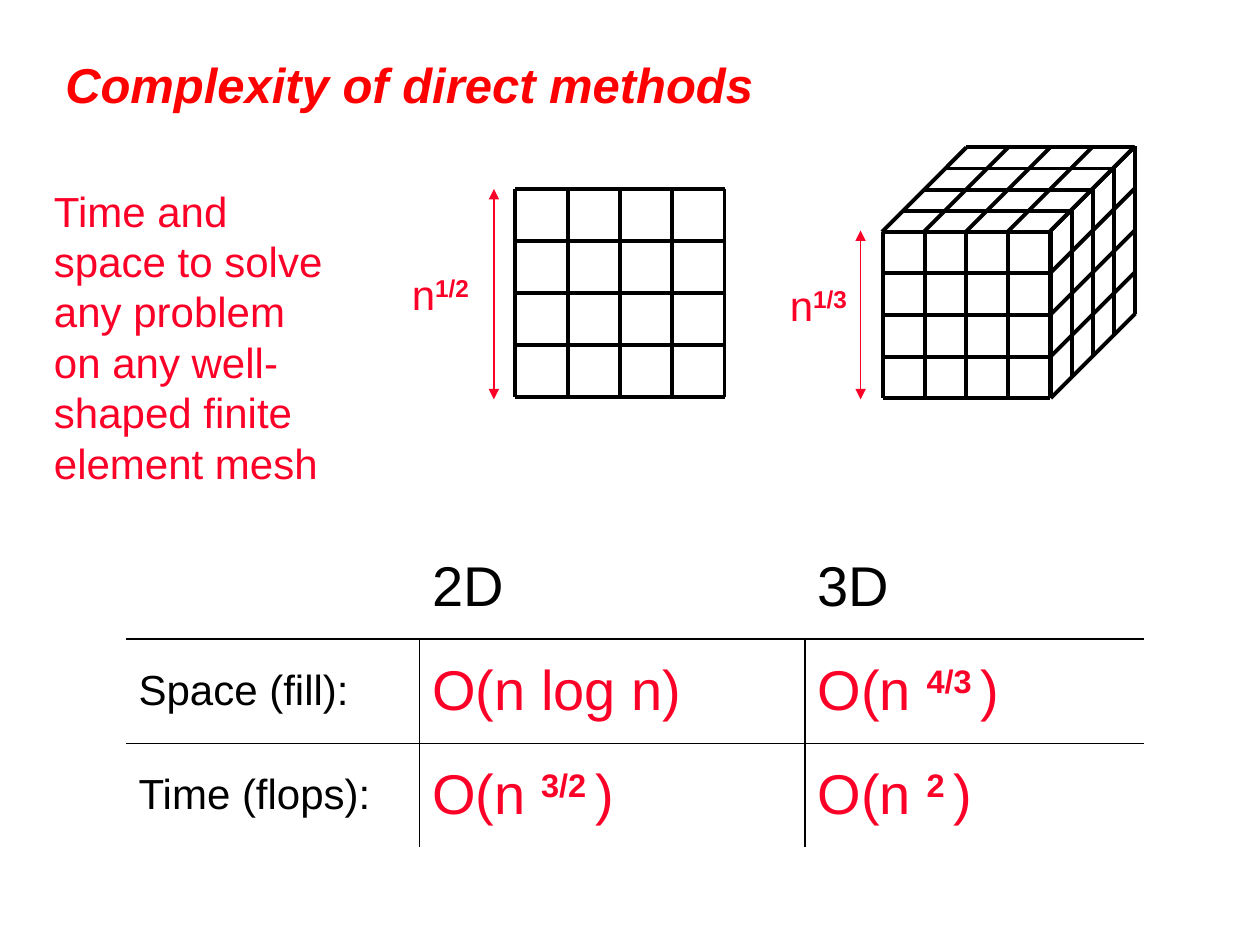
from lxml import etree
from pptx import Presentation, util as u
from pptx.dml.color import RGBColor
from pptx.enum import shapes, text
from pptx.oxml.ns import qn

COLORS = {"title": "FF0000", "accent": "FC0128", "ink": "000000"}
CELLS = 4
ROWS = [
    [None, "2D", "3D"],
    ["Space (fill):", "O(n log n)", ("O(n ", "4/3 ", ")")],
    ["Time (flops):", ("O(n ", "3/2 ", ")"), ("O(n ", "2 ", ")")],
]


def rgb(name):
    """Return a palette colour."""
    return RGBColor.from_string(COLORS[name])


def write(frame, content, size=24, color="accent", bold=False, italic=False):
    """Write a string, or parts of which every second one is superscript."""
    parts = (content,) if isinstance(content, str) else content
    for index, part in enumerate(parts):
        raised = index % 2 == 1
        run = frame.paragraphs[0].add_run()
        run.text = part
        font = run.font
        font.name, font.size = "Arial", u.Pt(size)
        font.bold, font.italic = bold or raised, italic
        font.color.rgb = rgb(color)
        if raised:
            run._r.get_or_add_rPr().set("baseline", "30000")


def add_label(parent, box, content, wrap=True, anchor=text.MSO_ANCHOR.TOP, **style):
    """Add a text box at left, top, width, height."""
    frame = parent.add_textbox(*map(u.Inches, box)).text_frame
    frame.word_wrap = wrap
    frame.vertical_anchor = anchor
    write(frame, content, **style)


def add_line(parent, start, end, color="ink", width=2.25, arrows=False):
    """Add a straight line, with arrowheads at both ends if asked."""
    line = parent.add_connector(shapes.MSO_CONNECTOR.STRAIGHT, *map(u.Inches, (*start, *end)))
    line.line.color.rgb = rgb(color)
    line.line.width = u.Pt(width)
    if arrows:
        for end_tag in ("a:headEnd", "a:tailEnd"):
            etree.SubElement(line.line._get_or_add_ln(), qn(end_tag), type="triangle")
    etree.SubElement(line._element.spPr, qn("a:effectLst"))


def add_parallels(parent, origin, along, across, first=0):
    """Draw evenly spaced lines that run along one vector, stepped across another."""
    for step in range(first, CELLS + 1):
        x, y = (o + a * step / CELLS for o, a in zip(origin, across))
        add_line(parent, (x, y), (x + along[0], y + along[1]))


def add_face(parent, origin, side, other, first=0):
    """Draw a mesh face spanned by two vectors."""
    add_parallels(parent, origin, side, other, first)
    add_parallels(parent, origin, other, side)


def add_dimension(parent, x, top, height, label_box, exponent):
    """Draw a labelled vertical dimension arrow."""
    add_label(parent, label_box, ("n", exponent), wrap=False)
    add_line(parent, (x, top + height), (x, top), "accent", 1, arrows=True)


def add_square_mesh(slide):
    """Draw the 2D mesh."""
    parent = slide.shapes.add_group_shape().shapes
    add_face(parent, (4.09, 1.5), (1.66, 0), (0, 1.65))
    add_dimension(parent, 3.92, 1.5, 1.67, (3.17, 2.08, 0.7, 0.5), "1/2")


def add_cube_mesh(slide):
    """Draw the 3D mesh as front, top and side faces."""
    parent = slide.shapes.add_group_shape().shapes
    edge, depth = 1.33, (0.67, -0.67)
    add_face(parent, (7.01, 1.84), (1.32, 0), (0, 1.32), first=1)
    add_face(parent, (7, 1.84), (edge, 0), depth)
    add_face(parent, (8.34, 1.83), (0, edge), depth)
    add_dimension(parent, 6.83, 1.83, 1.34, (6.17, 2.17, 0.7, 0.5), "1/3")


def set_borders(cell, visible):
    """Show the named cell borders and hide the others."""
    properties = cell._tc.get_or_add_tcPr()
    for index, side in enumerate("LRTB"):
        border = etree.Element(qn(f"a:ln{side}"), w=str(u.Pt(1)))
        if side in visible:
            fill = etree.SubElement(border, qn("a:solidFill"))
            etree.SubElement(fill, qn("a:srgbClr"), val=COLORS["ink"])
        else:
            etree.SubElement(border, qn("a:noFill"))
        properties.insert(index, border)


def add_complexity_table(slide):
    """Add the table of space and time bounds."""
    box = map(u.Inches, (1, 4.25, 8.08, 2.48))
    table = slide.shapes.add_table(3, 3, *box).table
    table.first_row = table.horz_banding = False
    for column, width in zip(table.columns, (2.33, 3.06, 2.69)):
        column.width = u.Inches(width)
    for row, height in zip(table.rows, (0.82, 0.83, 0.82)):
        row.height = u.Inches(height)
    for r, bounds in enumerate(ROWS):
        for c, bound in enumerate(bounds):
            cell = table.cell(r, c)
            cell.fill.background()
            cell.vertical_anchor = text.MSO_ANCHOR.MIDDLE
            if bound:
                write(cell.text_frame, bound, size=32 if c else 24,
                      color="accent" if r and c else "ink")
            visible = "T" * (r > 0) + "B" * (r < 2)
            visible += "L" * (r > 0 and c > 0) + "R" * (r > 0 and c < 2)
            set_borders(cell, visible)


def main():
    """Build and save the slide."""
    deck = Presentation()
    deck.slide_width, deck.slide_height = u.Inches(10), u.Inches(7.5)
    slide = deck.slides.add_slide(deck.slide_layouts[6])
    add_label(slide.shapes, (0.42, 0.33, 9.33, 0.67), "Complexity of direct methods",
              anchor=text.MSO_ANCHOR.MIDDLE, size=28, color="title", bold=True, italic=True)
    add_square_mesh(slide)
    add_cube_mesh(slide)
    add_complexity_table(slide)
    add_label(slide.shapes, (0.33, 1.42, 2.42, 2.5),
              "Time and space to solve any problem on any well-shaped finite element mesh")
    deck.save("out.pptx")


if __name__ == "__main__":
    main()
